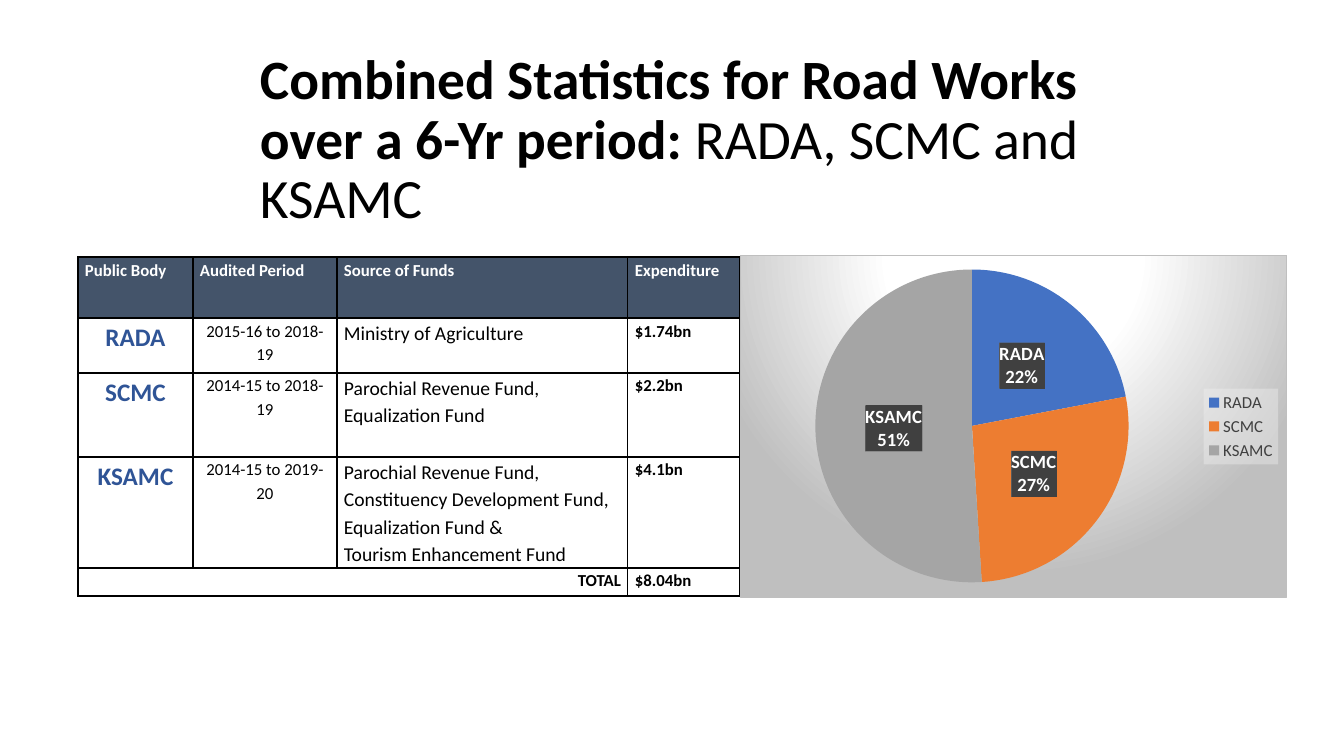
"""Build the slide on combined road works statistics for three public bodies."""
from lxml import etree
from pptx import Presentation
from pptx.chart.data import CategoryChartData
from pptx.dml.color import RGBColor
from pptx.enum.chart import XL_CHART_TYPE, XL_LABEL_POSITION, XL_LEGEND_POSITION
from pptx.enum.text import MSO_ANCHOR, PP_ALIGN
from pptx.util import Emu, Pt

LEFT, CENTER, RIGHT = PP_ALIGN.LEFT, PP_ALIGN.CENTER, PP_ALIGN.RIGHT
MIDDLE = MSO_ANCHOR.MIDDLE
PIE = XL_CHART_TYPE.PIE
LABEL_CENTER = XL_LABEL_POSITION.CENTER
LEGEND_RIGHT = XL_LEGEND_POSITION.RIGHT
PX = 914400 / 100.8
NS = ('xmlns:a="http://schemas.openxmlformats.org/drawingml/2006/main" '
      'xmlns:c="http://schemas.openxmlformats.org/drawingml/2006/chart"')
THEME = {
    "font": "Calibri", "black": "000000", "white": "FFFFFF", "header": "44546A",
    "body": "2F5496", "legend": "404040", "silver": "BFBFBF", "legend_fill": "F2F2F2",
    "label_stripe": "404040", "label_fill": "595959",
    "slices": ["4472C4", "ED7D31", "A5A5A5"],
    "title_size": 39.6, "name_size": 18, "fund_size": 14, "label_size": 13.3,
    "small_size": 12, "chart_size": 10,
}


def write(p, text, size=THEME["small_size"], color="black", bold=False, align=LEFT, spacing=1.15):
    p.alignment, p.line_spacing = align, spacing
    r = p.add_run()
    r.text = text
    r.font.name, r.font.size, r.font.bold = THEME["font"], Pt(size), bold
    r.font.color.rgb = RGBColor.from_string(THEME[color])


def xml(markup):
    head, tail = markup.split(">", 1)
    return etree.fromstring(f"{head} {NS}>{tail}")


prs = Presentation()
prs.slide_width, prs.slide_height = Emu(round(1344 * PX)), Emu(round(756 * PX))
s = prs.slides.add_slide(prs.slide_layouts[6])

title = s.shapes.add_textbox(*[Emu(round(v * PX)) for v in (250, 64, 1002, 154)])
tf = title.text_frame
tf.word_wrap, tf.vertical_anchor = True, MIDDLE
p = tf.paragraphs[0]
title_format = {"size": THEME["title_size"], "spacing": 0.9}
write(p, "Combined Statistics for Road Works ", bold=True, **title_format)
p.add_line_break()
write(p, "over a 6-Yr period: ", bold=True, **title_format)
write(p, "RADA, SCMC and KSAMC", **title_format)

rows = [
    ["Public Body", "Audited Period", "Source of Funds", "Expenditure"],
    ["RADA", "2015-16 to 2018-19", "Ministry of Agriculture", "$1.74bn"],
    ["SCMC", "2014-15 to 2018-19", "Parochial Revenue Fund,\nEqualization Fund", "$2.2bn"],
    ["KSAMC", "2014-15 to 2019-20",
     "Parochial Revenue Fund, Constituency Development Fund,\n"
     "Equalization Fund &\nTourism Enhancement Fund", "$4.1bn"],
    ["TOTAL", "", "", "$8.04bn"],
]
col_widths = [115, 144, 291, 112]
row_heights = [61, 55, 84, 111, 28]
column_formats = [
    {"size": THEME["name_size"], "color": "body", "bold": True, "align": CENTER},
    {"align": CENTER},
    {"size": THEME["fund_size"]},
    {"bold": True},
]
frame = s.shapes.add_table(len(rows), len(col_widths), *[
    Emu(round(v * PX)) for v in (78, 257, sum(col_widths), sum(row_heights))])
table = frame.table
table.horz_banding = False
for column, width in zip(table.columns, col_widths):
    column.width = Emu(round(width * PX))
for row, height in zip(table.rows, row_heights):
    row.height = Emu(round(height * PX))
table.cell(4, 0).merge(table.cell(4, 2))

for i, row in enumerate(rows):
    for j, text in enumerate(row):
        cell = table.cell(i, j)
        cell.margin_left = cell.margin_right = Emu(round(7 * PX))
        cell.margin_top = cell.margin_bottom = 0
        for side in ("lnL", "lnR", "lnT", "lnB"):
            cell._tc.get_or_add_tcPr().append(xml(
                f'<a:{side} w="12700"><a:solidFill><a:srgbClr val="{THEME["black"]}"/>'
                f'</a:solidFill></a:{side}>'))
        fmt = column_formats[j]
        if i == 0:
            cell.fill.solid()
            cell.fill.fore_color.rgb = RGBColor.from_string(THEME["header"])
            fmt = {"color": "white", "bold": True}
        else:
            cell.fill.background()
        if text == "TOTAL":
            fmt = {"bold": True, "align": RIGHT}
        if text:
            for n, line in enumerate(text.split("\n")):
                tf = cell.text_frame
                write(tf.add_paragraph() if n else tf.paragraphs[0], line, **fmt)

data = CategoryChartData()
data.categories = ["RADA", "SCMC", "KSAMC"]
data.add_series("Series 1", [22, 27, 51])
chart = s.shapes.add_chart(
    PIE, *[Emu(round(v * PX)) for v in (740, 255, 547, 343)], data).chart
chart.has_title = False
chart.font.name, chart.font.size = THEME["font"], Pt(THEME["chart_size"])
chart.font.color.rgb = RGBColor.from_string(THEME["black"])
chart.plots[0].vary_by_categories = True
series = chart.plots[0].series[0]
for i, color in enumerate(THEME["slices"]):
    fill = series.points[i].format.fill
    fill.solid()
    fill.fore_color.rgb = RGBColor.from_string(color)

labels = series.data_labels
labels.show_value, labels.show_category_name, labels.show_percentage = False, True, True
labels.number_format, labels.number_format_is_linked = "0%", False
labels.position = LABEL_CENTER
labels.font.name, labels.font.size, labels.font.bold = THEME["font"], Pt(THEME["label_size"]), True
labels.font.color.rgb = RGBColor.from_string(THEME["white"])
dlbls = labels._element
dlbls.find("{*}txPr").addprevious(xml(
    '<c:spPr><a:pattFill prst="dkVert">'
    f'<a:fgClr><a:srgbClr val="{THEME["label_stripe"]}"/></a:fgClr>'
    f'<a:bgClr><a:srgbClr val="{THEME["label_fill"]}"/></a:bgClr></a:pattFill></c:spPr>'))
dlbls.find("{*}showBubbleSize").addnext(xml("<c:separator>\n</c:separator>"))

chart.has_legend = True
legend = chart.legend
legend.position, legend.include_in_layout = LEGEND_RIGHT, False
legend.font.name, legend.font.size = THEME["font"], Pt(THEME["small_size"])
legend.font.color.rgb = RGBColor.from_string(THEME["legend"])
legend._element.find("{*}txPr").addprevious(xml(
    f'<c:spPr><a:solidFill><a:srgbClr val="{THEME["legend_fill"]}"><a:alpha val="39000"/>'
    '</a:srgbClr></a:solidFill></c:spPr>'))

chart_element = chart._chartSpace.chart
plot_area = chart_element.plotArea
for layout in plot_area.findall("{*}layout"):
    plot_area.remove(layout)
box = {"x": 75 / 547, "y": 14 / 343, "w": 314 / 547, "h": 314 / 343}
plot_area.insert(0, xml(
    '<c:layout><c:manualLayout><c:layoutTarget val="inner"/>'
    '<c:xMode val="edge"/><c:yMode val="edge"/>'
    + "".join(f'<c:{key} val="{value:.3f}"/>' for key, value in box.items())
    + '</c:manualLayout></c:layout>'))
stops = "".join(f'<a:gs pos="{pos}000"><a:srgbClr val="{THEME[color]}"/></a:gs>'
                for pos, color in [(0, "white"), (39, "white"), (100, "silver")])
chart_element.addprevious(xml('<c:roundedCorners val="0"></c:roundedCorners>'))
chart_element.addnext(xml(
    f'<c:spPr><a:gradFill><a:gsLst>{stops}</a:gsLst><a:path path="circle">'
    '<a:fillToRect l="50000" t="-80000" r="50000" b="180000"/></a:path></a:gradFill>'
    f'<a:ln w="9525"><a:solidFill><a:srgbClr val="{THEME["silver"]}"/></a:solidFill></a:ln></c:spPr>'))

prs.save("out.pptx")
